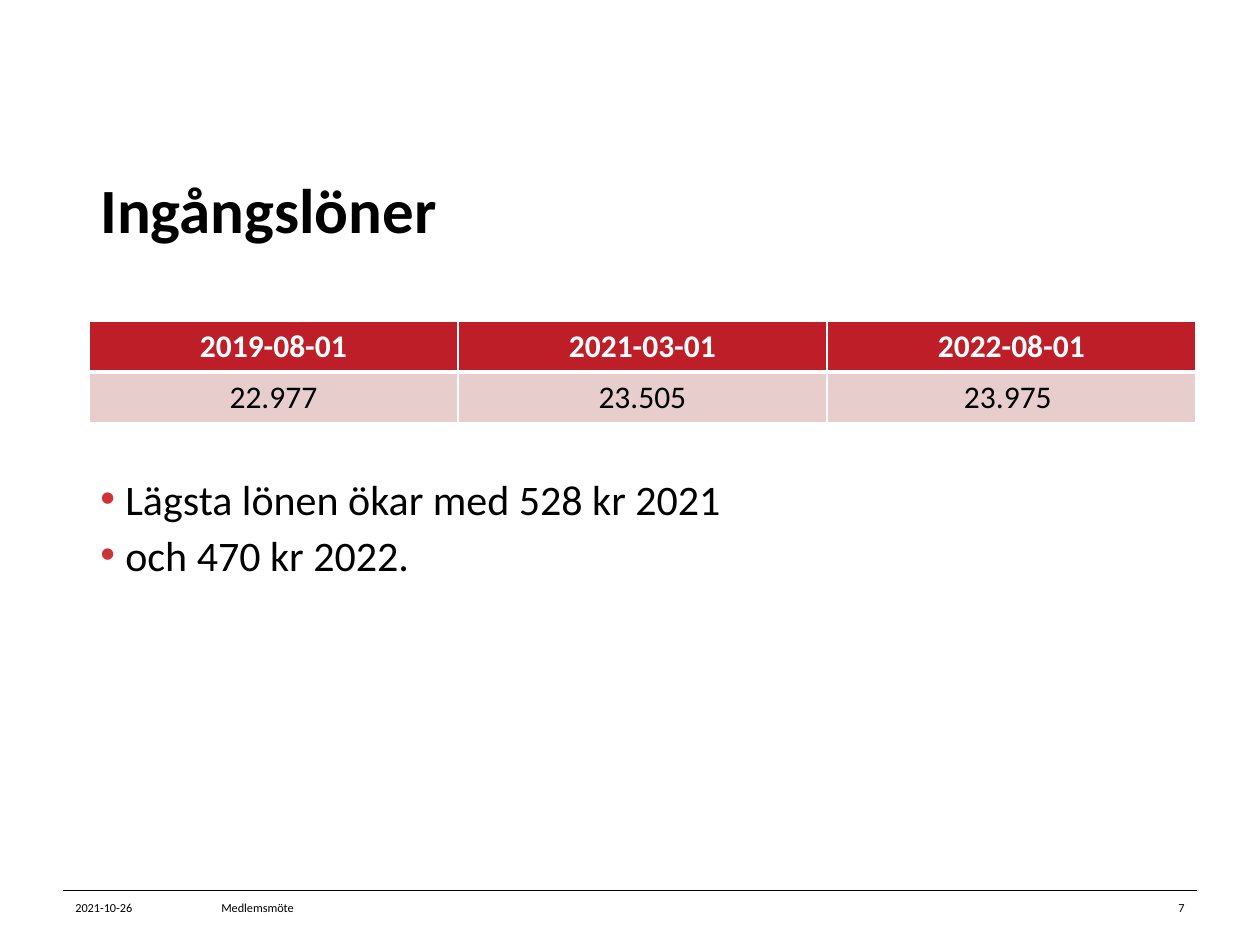
"""Build the slide on starting salaries: title, salary table, bullets and footer."""
from dataclasses import dataclass
from typing import Optional

import lxml.etree
import pptx
import pptx.dml.color
import pptx.enum.shapes
import pptx.enum.text
import pptx.oxml.ns
import pptx.util

Align = pptx.enum.text.PP_ALIGN
Anchor = pptx.enum.text.MSO_ANCHOR
RGBColor = pptx.dml.color.RGBColor
qn = pptx.oxml.ns.qn

BLACK = RGBColor(0x00, 0x00, 0x00)
WHITE = RGBColor(0xFF, 0xFF, 0xFF)
RED = RGBColor(0xBE, 0x1E, 0x27)
PINK = RGBColor(0xE8, 0xCD, 0xCD)
BULLET_RED = RGBColor(0xCC, 0x33, 0x33)

FONT = "Calibri"
PIXELS_PER_INCH = 126
FOOTER_TOP, FOOTER_HEIGHT = 890, 36
TABLE_LEFT, TABLE_TOP, COLUMN_WIDTH, ROW_HEIGHT = 89, 321, 369, 51


@dataclass(frozen=True)
class FooterItem:
    text: str
    left: int
    width: int
    align: Align = Align.LEFT


@dataclass(frozen=True)
class RowStyle:
    fill: RGBColor
    color: RGBColor
    bold: bool
    top_border: int
    bottom_border: int


FOOTER = [
    FooterItem("2021-10-26", 63, 121),
    FooterItem("Medlemsmöte", 209, 843),
    FooterItem("7", 1077, 120, Align.RIGHT),
]
SALARIES = [
    ("2019-08-01", "2021-03-01", "2022-08-01"),
    ("22.977", "23.505", "23.975 "),
]
ROW_STYLES = [
    RowStyle(RED, WHITE, True, 1, 3),
    RowStyle(PINK, BLACK, False, 3, 1),
]


def px(length: int) -> pptx.util.Emu:
    return pptx.util.Emu(round(length * 914400 / PIXELS_PER_INCH))


def add_bullet(paragraph) -> None:
    properties = paragraph._p.get_or_add_pPr()
    properties.set("marL", str(px(25)))
    properties.set("indent", str(-px(25)))
    color = lxml.etree.SubElement(properties, qn("a:buClr"))
    lxml.etree.SubElement(color, qn("a:srgbClr"), val=str(BULLET_RED))
    lxml.etree.SubElement(properties, qn("a:buFont"), typeface="Arial")
    lxml.etree.SubElement(properties, qn("a:buChar"), char="•")


def write_text(text_frame, text: str, *, size: int, color: RGBColor = BLACK,
               bold: bool = False, align: Align = Align.LEFT,
               line_spacing: Optional[int] = None, space_after: int = 0,
               bullet: bool = False) -> None:
    for index, line in enumerate(text.split("\n")):
        paragraph = text_frame.add_paragraph() if index else text_frame.paragraphs[0]
        if bullet:
            add_bullet(paragraph)
        paragraph.alignment = align
        paragraph.space_after = pptx.util.Pt(space_after)
        if line_spacing:
            paragraph.line_spacing = pptx.util.Pt(line_spacing)
        run = paragraph.add_run()
        run.text = line
        run.font.name = FONT
        run.font.size = pptx.util.Pt(size)
        run.font.bold = bold
        run.font.color.rgb = color


def add_text(slide, text: str, left: int, top: int, width: int, height: int,
             anchor: Anchor = Anchor.MIDDLE, **text_format) -> None:
    text_frame = slide.shapes.add_textbox(px(left), px(top), px(width), px(height)).text_frame
    text_frame.word_wrap = True
    text_frame.vertical_anchor = anchor
    write_text(text_frame, text, **text_format)


def add_borders(cell, style: RowStyle) -> None:
    properties = cell._tc.get_or_add_tcPr()
    widths = {"L": 1, "R": 1, "T": style.top_border, "B": style.bottom_border}
    for side, width in widths.items():
        border = lxml.etree.SubElement(properties, qn(f"a:ln{side}"), w=str(pptx.util.Pt(width)))
        fill = lxml.etree.SubElement(border, qn("a:solidFill"))
        lxml.etree.SubElement(fill, qn("a:srgbClr"), val=str(WHITE))


def add_salary_table(slide) -> None:
    row_count, column_count = len(SALARIES), len(SALARIES[0])
    table = slide.shapes.add_table(
        row_count, column_count, px(TABLE_LEFT), px(TABLE_TOP),
        px(COLUMN_WIDTH * column_count), px(ROW_HEIGHT * row_count)).table
    for column in table.columns:
        column.width = px(COLUMN_WIDTH)
    for row, values, style in zip(table.rows, SALARIES, ROW_STYLES):
        row.height = px(ROW_HEIGHT)
        for cell, value in zip(row.cells, values):
            add_borders(cell, style)
            cell.fill.solid()
            cell.fill.fore_color.rgb = style.fill
            write_text(cell.text_frame, value, size=18, color=style.color,
                       bold=style.bold, align=Align.CENTER)


def add_footer(slide) -> None:
    rule = slide.shapes.add_connector(
        pptx.enum.shapes.MSO_CONNECTOR.STRAIGHT,
        px(63), px(FOOTER_TOP), px(1197), px(FOOTER_TOP))
    rule.line.color.rgb = BLACK
    rule.line.width = pptx.util.Pt(0.25)
    lxml.etree.SubElement(rule._element.spPr, qn("a:effectLst"))
    for item in FOOTER:
        add_text(slide, item.text, item.left, FOOTER_TOP, item.width, FOOTER_HEIGHT,
                 size=7, align=item.align)


def main() -> None:
    presentation = pptx.Presentation()
    presentation.slide_width = px(1260)
    presentation.slide_height = px(945)
    slide = presentation.slides.add_slide(presentation.slide_layouts[6])
    add_text(slide, "Ingångslöner", 88, 139, 1109, 158, size=36, bold=True, line_spacing=32)
    add_salary_table(slide)
    add_footer(slide)
    add_text(slide, "Lägsta lönen ökar med 528 kr 2021\noch 470 kr 2022.",
             88, 472, 1109, 379, anchor=Anchor.TOP, size=24,
             line_spacing=26, space_after=6, bullet=True)
    presentation.save("out.pptx")


if __name__ == "__main__":
    main()
